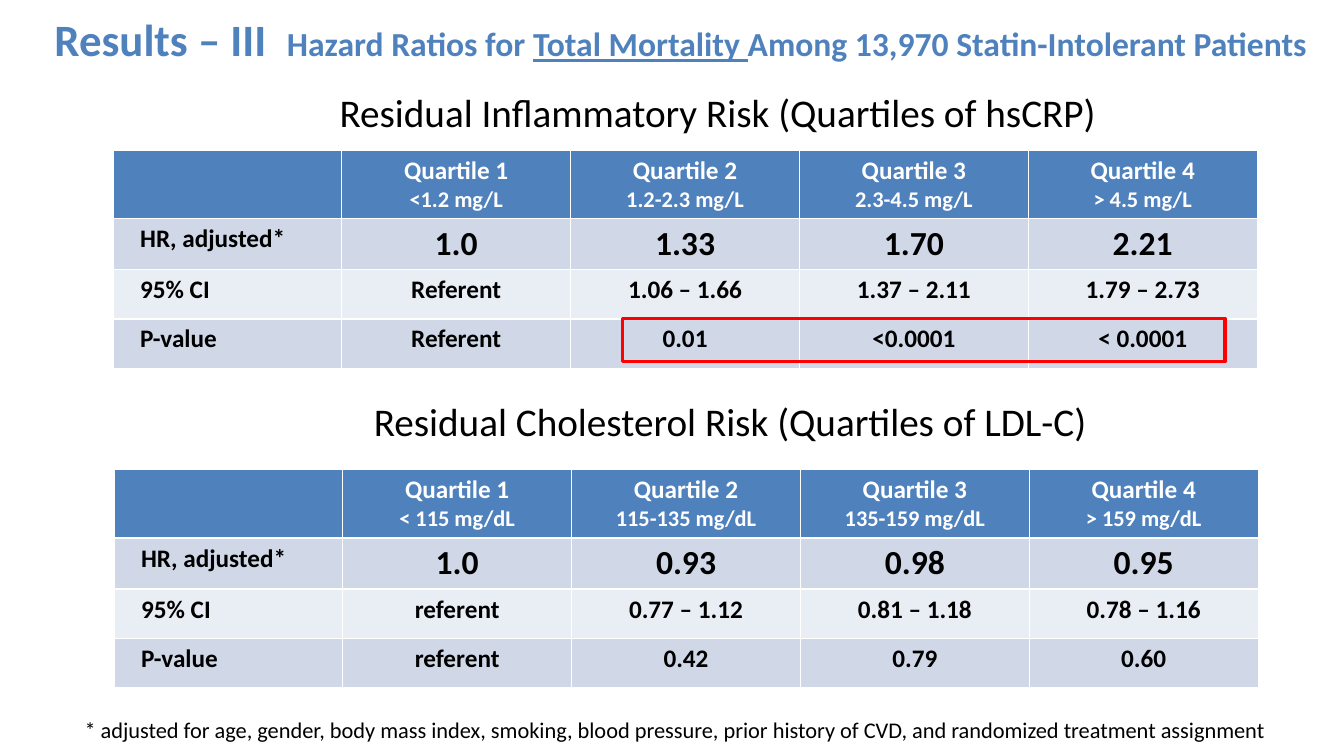
from pptx import Presentation
from pptx.dml.color import RGBColor
from pptx.enum.shapes import MSO_SHAPE
from pptx.enum.text import MSO_ANCHOR, MSO_AUTO_SIZE, PP_ALIGN
from pptx.util import Inches, Pt

RECT = MSO_SHAPE.RECTANGLE
TOP = MSO_ANCHOR.TOP
FIXED = MSO_AUTO_SIZE.NONE
LEFT, CENTER = PP_ALIGN.LEFT, PP_ALIGN.CENTER
TITLE_ONLY = 5
FONT = "Calibri"
COLORS = {
    "blue": "4F81BD",
    "band": "D0D8E8",
    "pale": "E9EDF4",
    "white": "FFFFFF",
    "black": "000000",
    "red": "FF0000",
}
COL_W, HEAD_H, ROW_H = 2.27, 0.65, 0.49
LABELS = ["HR, adjusted*", "95% CI", "P-value"]
CRP = {
    "ranges": ["<1.2 mg/L", "1.2-2.3 mg/L", "2.3-4.5 mg/L", "> 4.5 mg/L"],
    "rows": [
        ["1.0", "1.33", "1.70", "2.21"],
        ["Referent", "1.06 – 1.66", "1.37 – 2.11", "1.79 – 2.73"],
        ["Referent", "0.01", "<0.0001", "< 0.0001"],
    ],
}
LDL = {
    "ranges": ["< 115 mg/dL", "115-135 mg/dL", "135-159 mg/dL", "> 159 mg/dL"],
    "rows": [
        ["1.0", "0.93", "0.98", "0.95"],
        ["referent", "0.77 – 1.12", "0.81 – 1.18", "0.78 – 1.16"],
        ["referent", "0.42", "0.79", "0.60"],
    ],
}


def color(name):
    """Return the named colour."""
    return RGBColor.from_string(COLORS[name])


def add_run(para, text, size, tint="black", bold=False, line=False):
    """Add one formatted run to a paragraph."""
    run = para.add_run()
    run.text = text
    font = run.font
    font.name, font.size = FONT, Pt(size)
    font.bold, font.underline = bold, line
    font.color.rgb = color(tint)


def add_title(slide):
    """Place and fill the title placeholder."""
    title = slide.shapes.title
    title.left, title.top = Inches(0.44), Inches(0.07)
    title.width, title.height = Inches(13.08), Inches(0.64)
    frame = title.text_frame
    frame.auto_size, frame.word_wrap = FIXED, True
    frame.vertical_anchor = TOP
    para = frame.paragraphs[0]
    para.alignment = LEFT
    add_run(para, "Results – III  ", 32, "blue", True)
    add_run(para, "Hazard Ratios for ", 24, "blue", True)
    add_run(para, "Total Mortality ", 24, "blue", True, True)
    add_run(para, "Among 13,970 Statin-Intolerant Patients", 24, "blue", True)


def add_text(slide, text, size, left, top, width, height):
    """Add a plain line of text."""
    box = slide.shapes.add_textbox(
        Inches(left), Inches(top), Inches(width), Inches(height))
    frame = box.text_frame
    frame.word_wrap = True
    add_run(frame.paragraphs[0], text, size)


def fill_cell(cell, fill, lines, tint="black", align=CENTER):
    """Fill a cell and write its (text, size) lines."""
    cell.fill.solid()
    cell.fill.fore_color.rgb = color(fill)
    frame = cell.text_frame
    for i, (text, size) in enumerate(lines):
        para = frame.add_paragraph() if i else frame.paragraphs[0]
        para.alignment = align
        add_run(para, text, size, tint, True)


def add_risk(slide, data, left, top):
    """Add a table of hazard ratios by quartile."""
    cols, rows = len(data["ranges"]) + 1, len(LABELS) + 1
    table = slide.shapes.add_table(
        rows, cols, Inches(left), Inches(top), Inches(COL_W * cols),
        Inches(HEAD_H + ROW_H * len(LABELS))).table
    for col in table.columns:
        col.width = Inches(COL_W)
    for r, row in enumerate(table.rows):
        row.height = Inches(ROW_H if r else HEAD_H)
    fill_cell(table.cell(0, 0), "blue", [])
    for c, span in enumerate(data["ranges"], 1):
        lines = [(f"Quartile {c}", 18), (span, 16)]
        fill_cell(table.cell(0, c), "blue", lines, "white")
    for r, (label, values) in enumerate(zip(LABELS, data["rows"]), 1):
        fill = "band" if r % 2 else "pale"
        head = table.cell(r, 0)
        head.margin_left = Inches(0.27)
        fill_cell(head, fill, [(label, 18)], align=LEFT)
        for c, value in enumerate(values, 1):
            fill_cell(table.cell(r, c), fill, [(value, 24 if r == 1 else 18)])


def add_frame(slide, left, top, width, height):
    """Add a red outline around key values."""
    box = slide.shapes.add_shape(
        RECT, Inches(left), Inches(top), Inches(width), Inches(height))
    box.shadow.inherit = False
    box.fill.background()
    box.line.color.rgb = color("red")
    box.line.width = Pt(2.25)


def main():
    """Build and save the slide."""
    deck = Presentation()
    deck.slide_width, deck.slide_height = Inches(13.33), Inches(7.5)
    slide = deck.slides.add_slide(deck.slide_layouts[TITLE_ONLY])
    add_title(slide)
    add_risk(slide, CRP, 1.12, 1.49)
    add_risk(slide, LDL, 1.13, 4.66)
    add_text(slide, "Residual Inflammatory Risk (Quartiles of hsCRP)",
             28, 3.27, 0.83, 8.06, 0.57)
    add_text(slide, "Residual Cholesterol Risk (Quartiles of LDL-C)",
             28, 3.61, 3.89, 8.4, 0.57)
    add_text(slide, "* adjusted for age, gender, body mass index, smoking, "
             "blood pressure, prior history of CVD, and randomized treatment "
             "assignment", 16, 0.74, 7.06, 12.5, 0.37)
    add_frame(slide, 6.17, 3.16, 5.98, 0.43)
    deck.save("out.pptx")


if __name__ == "__main__":
    main()
